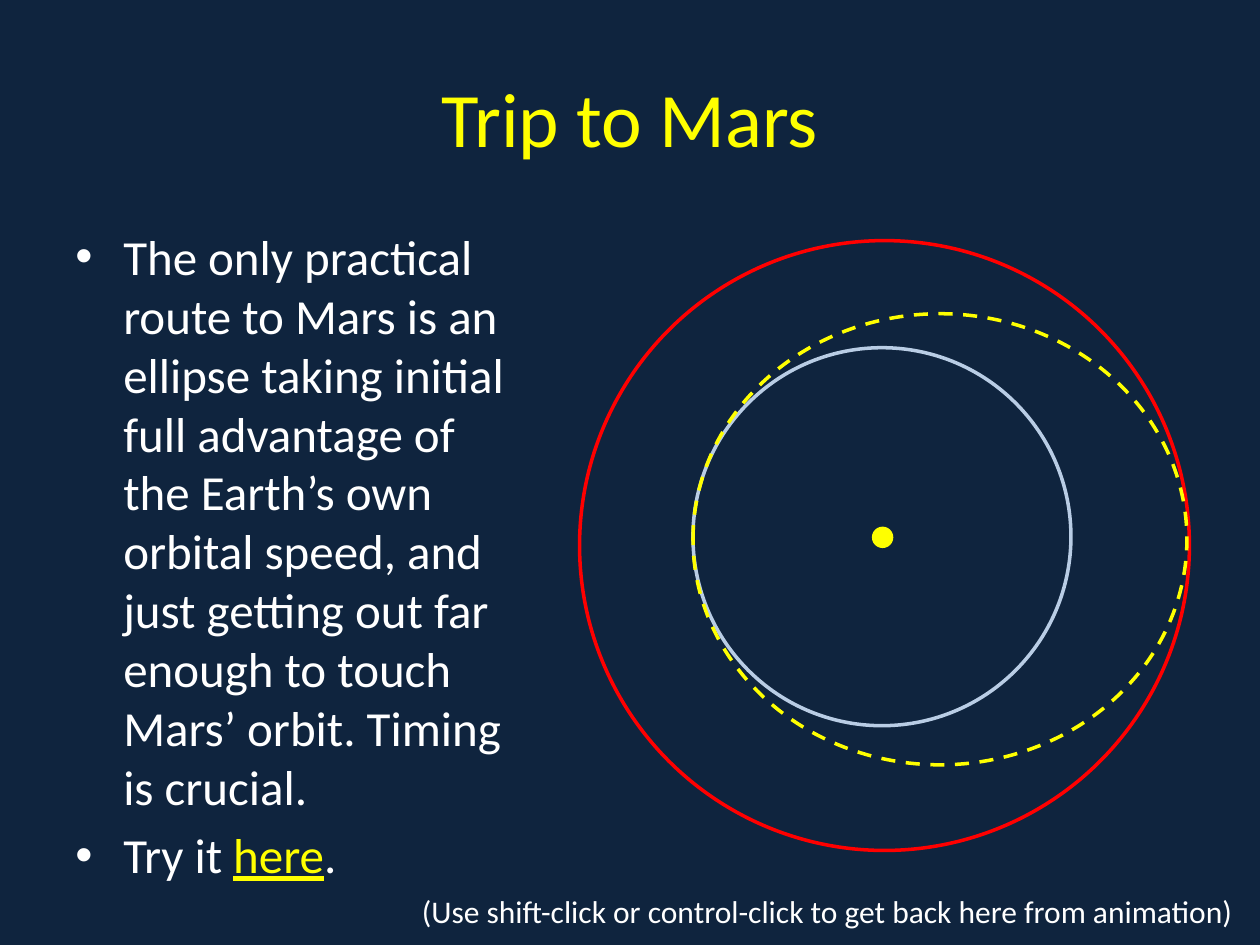
from dataclasses import dataclass
from typing import Optional

import pptx
import pptx.dml.color
import pptx.enum.dml
import pptx.enum.shapes
import pptx.enum.text
import pptx.oxml.ns
import pptx.util
from lxml import etree
from pptx.util import Inches

NAVY, YELLOW, WHITE = "0F243E", "FFFF00", "FFFFFF"
EARTH_BLUE, MARS_RED = "B9CDE5", "FF0000"


@dataclass
class Orbit:
    left: float
    top: float
    width: float
    height: float
    color: str
    dashed: bool = False


ORBITS = [
    Orbit(5.5, 2.76, 3, 3, EARTH_BLUE),
    Orbit(4.6, 1.91, 4.84, 4.84, MARS_RED),
    Orbit(5.5, 2.49, 3.92, 3.58, YELLOW, dashed=True),
]


def rgb(color: str) -> pptx.dml.color.RGBColor:
    return pptx.dml.color.RGBColor.from_string(color)


def add_text_frame(slide, left: float, top: float, width: float, height: float,
                   anchor=pptx.enum.text.MSO_ANCHOR.TOP):
    box = slide.shapes.add_textbox(Inches(left), Inches(top), Inches(width), Inches(height))
    frame = box.text_frame
    frame.word_wrap = True
    frame.vertical_anchor = anchor
    return frame


def add_run(paragraph, text: str, *, size: float, color: str = WHITE,
            underline: bool = False) -> None:
    run = paragraph.add_run()
    run.text = text
    run.font.name = "Calibri"
    run.font.size = pptx.util.Pt(size)
    run.font.color.rgb = rgb(color)
    run.font.underline = underline


def make_bullet(paragraph) -> None:
    paragraph.space_before = pptx.util.Pt(5.6)
    properties = paragraph._p.get_or_add_pPr()
    properties.set("marL", str(Inches(0.38)))
    properties.set("indent", str(-Inches(0.38)))
    font = etree.SubElement(properties, pptx.oxml.ns.qn("a:buFont"))
    font.set("typeface", "Arial")
    bullet = etree.SubElement(properties, pptx.oxml.ns.qn("a:buChar"))
    bullet.set("char", "•")


def add_ellipse(slide, left: float, top: float, width: float, height: float,
                fill: Optional[str] = None):
    """Add an ellipse with the given fill, or none, and no shadow."""
    ellipse = slide.shapes.add_shape(
        pptx.enum.shapes.MSO_SHAPE.OVAL,
        Inches(left), Inches(top), Inches(width), Inches(height))
    ellipse.shadow.inherit = False
    if fill:
        ellipse.fill.solid()
        ellipse.fill.fore_color.rgb = rgb(fill)
        ellipse.line.fill.background()
    else:
        ellipse.fill.background()
    return ellipse


def add_orbit(slide, orbit: Orbit) -> None:
    line = add_ellipse(slide, orbit.left, orbit.top, orbit.width, orbit.height).line
    line.color.rgb = rgb(orbit.color)
    line.width = pptx.util.Pt(2)
    if orbit.dashed:
        line.dash_style = pptx.enum.dml.MSO_LINE.DASH


def main() -> None:
    deck = pptx.Presentation()
    deck.slide_width, deck.slide_height = Inches(10), Inches(7.5)
    slide = deck.slides.add_slide(deck.slide_layouts[6])
    slide.background.fill.solid()
    slide.background.fill.fore_color.rgb = rgb(NAVY)

    title = add_text_frame(slide, 0.5, 0.3, 9, 1.25,
                           pptx.enum.text.MSO_ANCHOR.MIDDLE).paragraphs[0]
    title.alignment = pptx.enum.text.PP_ALIGN.CENTER
    add_run(title, "Trip to Mars", size=44, color=YELLOW)

    body = add_text_frame(slide, 0.5, 1.75, 3.75, 5.5)
    route, invitation = body.paragraphs[0], body.add_paragraph()
    make_bullet(route)
    add_run(route, "The only practical route to Mars is an ellipse taking initial "
                   "full advantage of the Earth’s own orbital speed, and just getting "
                   "out far enough to touch Mars’ orbit. Timing is crucial.", size=28)
    make_bullet(invitation)
    add_run(invitation, "Try it ", size=28)
    add_run(invitation, "here", size=28, color=YELLOW, underline=True)
    add_run(invitation, ".", size=28)

    add_ellipse(slide, 6.92, 4.18, 0.17, 0.17, fill=YELLOW)
    for orbit in ORBITS:
        add_orbit(slide, orbit)

    hint = add_text_frame(slide, 3.25, 7.03, 7.92, 0.4).paragraphs[0]
    add_run(hint, "(Use shift-click or control-click to get back here from animation)",
            size=18)

    deck.save("out.pptx")


if __name__ == "__main__":
    main()
